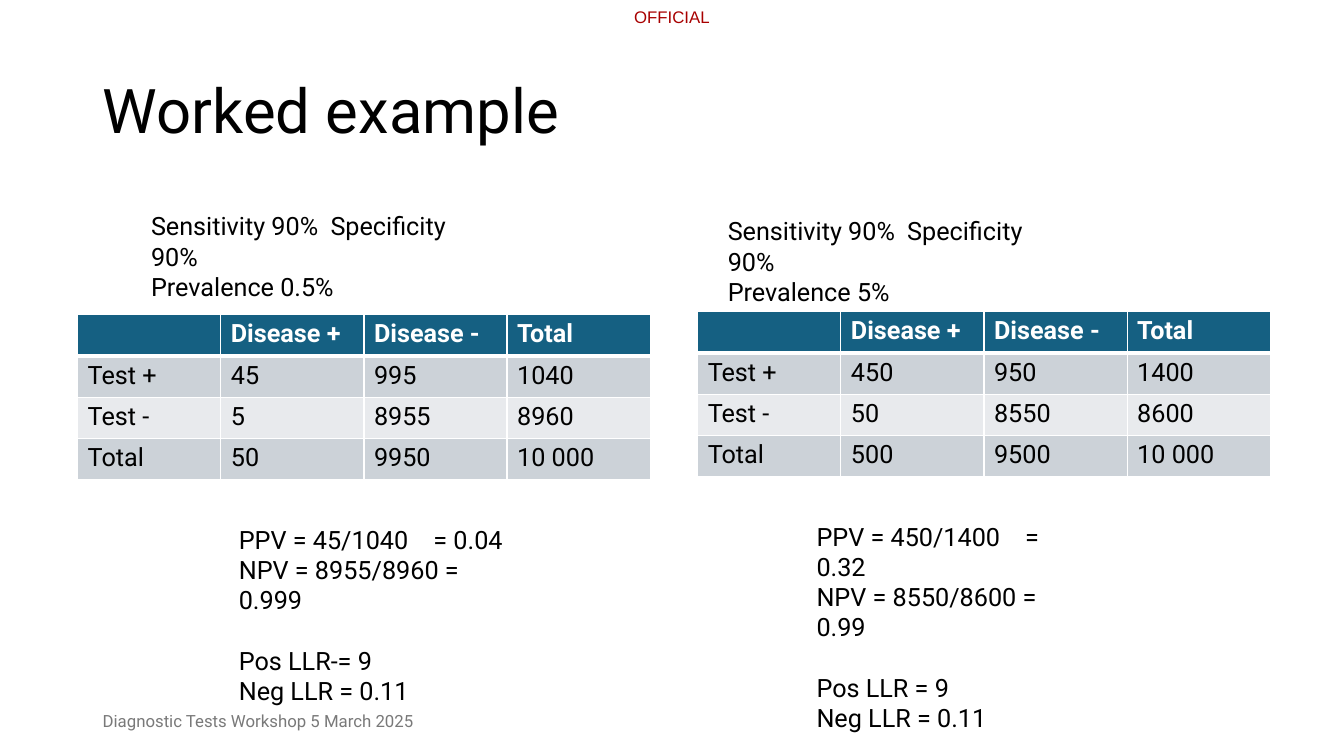
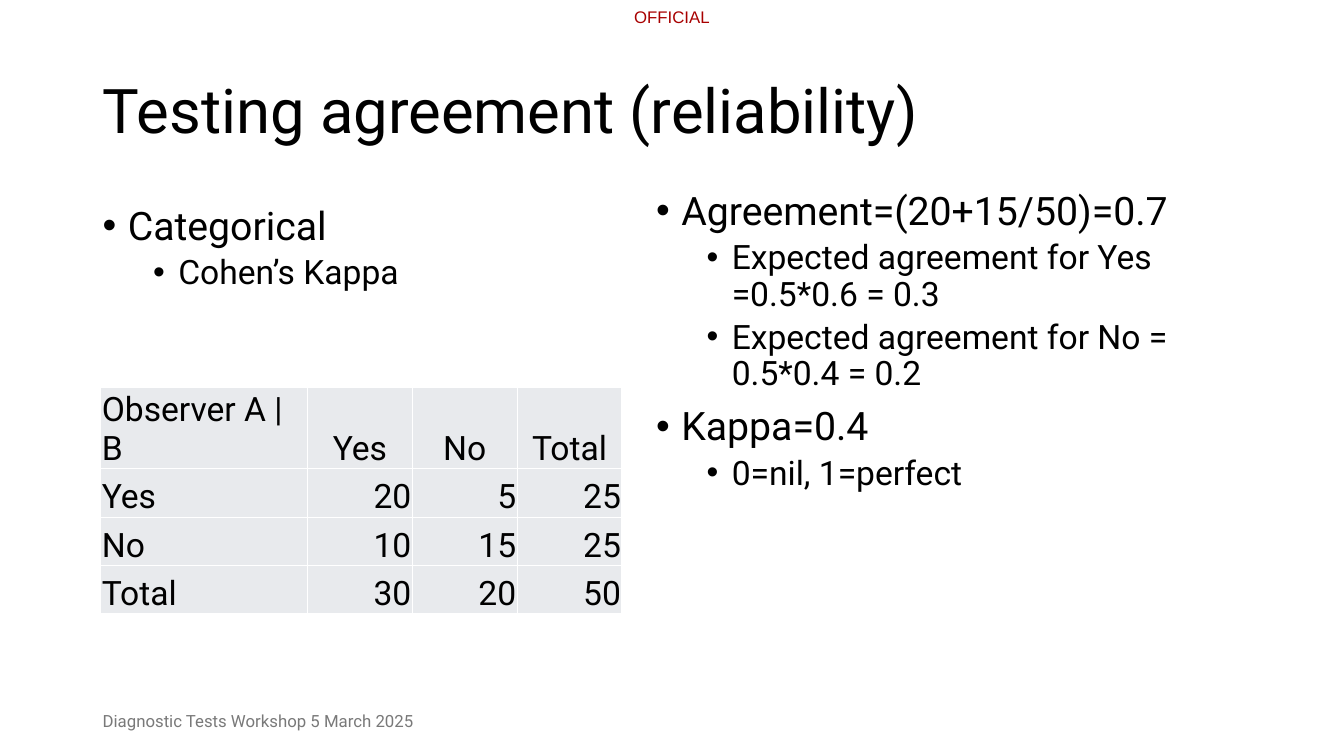
from lxml import etree
from pptx import Presentation
from pptx import util as u
from pptx.dml.color import RGBColor
from pptx.enum import text
from pptx.oxml.ns import qn

ALIGN = {"l": text.PP_ALIGN.LEFT, "c": text.PP_ALIGN.CENTER, "r": text.PP_ALIGN.RIGHT}


def color(hex_string):
    return RGBColor.from_string(hex_string)


def write(tf, content, size=18, font="Roboto", fill="000000", bold=False, align="l",
          before=0, spacing=None, level=None, tab=None):
    """Add one paragraph to a text frame; the first call fills the empty one."""
    p = tf.paragraphs[0]
    first = not p.runs
    if not first:
        p = tf.add_paragraph()
    p.alignment = ALIGN[align]
    p.space_before = u.Pt(0 if first else before)
    if spacing:
        p.line_spacing = spacing
    pPr = p._p.get_or_add_pPr()
    if level is not None:
        p.level = level
        pPr.set("marL", str(u.Inches(0.25 + 0.5 * level)))
        pPr.set("indent", str(u.Inches(-0.25)))
        etree.SubElement(pPr, qn("a:buFont"), typeface="Arial")
        etree.SubElement(pPr, qn("a:buChar"), char="•")
    if tab:
        tabs = etree.SubElement(pPr, qn("a:tabLst"))
        etree.SubElement(tabs, qn("a:tab"), pos=str(u.Inches(tab)), algn="l")
    r = p.add_run()
    r.text = content
    r.font.size = u.Pt(size)
    r.font.name = font
    r.font.bold = bold
    r.font.color.rgb = color(fill)


def border(cell, bottom):
    """Draw white cell edges, with the given bottom width in points."""
    tcPr = cell._tc.get_or_add_tcPr()
    for side, width in (("L", 1), ("R", 1), ("T", 1), ("B", bottom)):
        ln = etree.SubElement(tcPr, qn(f"a:ln{side}"), w=str(u.Pt(width)))
        solid = etree.SubElement(ln, qn("a:solidFill"))
        etree.SubElement(solid, qn("a:srgbClr"), val="FFFFFF")


class Deck:
    HEADER, DARK_BAND, LIGHT_BAND = "156082", "CCD2D8", "E8EAED"

    def __init__(self):
        self.prs = Presentation()
        self.prs.slide_width = u.Inches(13.33)
        self.prs.slide_height = u.Inches(7.5)
        self.s = None

    def slide(self, title):
        self.s = self.prs.slides.add_slide(self.prs.slide_layouts[5])
        sp = self.s.shapes.title
        sp.left, sp.top, sp.width, sp.height = map(u.Inches, (0.92, 0.4, 11.5, 1.45))
        tf = sp.text_frame
        tf.auto_size = text.MSO_AUTO_SIZE.NONE
        tf.word_wrap = True
        tf.vertical_anchor = text.MSO_ANCHOR.MIDDLE
        write(tf, title, size=44, spacing=0.9)
        tf = self.box(6.29, 0.07, 0.8, 0.2, margin=0)
        write(tf, "OFFICIAL", size=12, font="Arial", fill="A80000")
        tf = self.box(0.92, 6.95, 4.5, 0.4)
        tf.vertical_anchor = text.MSO_ANCHOR.MIDDLE
        write(tf, "Diagnostic Tests Workshop 5 March 2025", size=12, fill="797979")

    def box(self, left, top, width, height, margin=None):
        sp = self.s.shapes.add_textbox(*map(u.Inches, (left, top, width, height)))
        tf = sp.text_frame
        tf.word_wrap = True
        if margin is not None:
            tf.margin_left = tf.margin_right = u.Inches(margin)
            tf.margin_top = tf.margin_bottom = u.Inches(margin)
        return tf

    def bullets(self, left, top, width, height, items):
        tf = self.box(left, top, width, height)
        for level, content in items:
            write(tf, content, size=28 - 4 * level, before=10 - 5 * level,
                  spacing=0.9, level=level)

    def grid(self, left, top, widths, row_height, rows):
        """Add an unstyled table and yield (row, column, cell, content)."""
        shape = self.s.shapes.add_table(
            len(rows), len(widths), *map(u.Inches, (left, top, sum(widths), row_height * len(rows))))
        table = shape.table
        table.first_row = table.horz_banding = False
        for column, width in zip(table.columns, widths):
            column.width = u.Inches(width)
        for i, row in enumerate(rows):
            table.rows[i].height = u.Inches(row_height)
            for j, content in enumerate(row):
                yield i, j, table.cell(i, j), content

    def disease_table(self, left, top, rows):
        rows = [["", "Disease +", "Disease -", "Total"], *rows]
        for i, j, cell, content in self.grid(left, top, [1.42] * 4, 0.41, rows):
            head = i == 0
            border(cell, 3 if head else 1)
            cell.fill.solid()
            band = self.DARK_BAND if i % 2 else self.LIGHT_BAND
            cell.fill.fore_color.rgb = color(self.HEADER if head else band)
            if content:
                write(cell.text_frame, content, bold=head, fill="FFFFFF" if head else "000000")

    def observer_table(self, left, top, rows):
        for i, j, cell, content in self.grid(left, top, [2.05] + [1.04] * 3, 0.48, rows):
            border(cell, 1)
            cell.fill.solid()
            cell.fill.fore_color.rgb = color(self.LIGHT_BAND)
            cell.vertical_anchor = text.MSO_ANCHOR.BOTTOM
            cell.margin_left = cell.margin_right = cell.margin_top = u.Inches(0.01)
            cell.margin_bottom = 0
            align = "l" if j == 0 else "c" if i == 0 else "r"
            write(cell.text_frame, content, size=24, align=align)

    def assumptions(self, left, top, prevalence):
        tf = self.box(left, top, 3.5, 0.71)
        write(tf, "Sensitivity 90%\tSpecificity 90%", tab=1.78)
        write(tf, f"Prevalence {prevalence}")

    def results(self, left, top, width, tab, ppv, npv, positive):
        tf = self.box(left, top, width, 1.62)
        write(tf, ppv, tab=tab)
        write(tf, npv)
        write(tf, positive, before=21.5)
        write(tf, "Neg LLR = 0.11")


def worked_example(deck):
    deck.slide("Worked example")
    deck.assumptions(1.4, 2.04, "0.5%")
    deck.disease_table(0.77, 3.12, [
        ["Test +", "45", "995", "1040"],
        ["Test -", "5", "8955", "8960"],
        ["Total", "50", "9950", "10 000"]])
    deck.results(2.27, 5.15, 2.92, 1.93, "PPV = 45/1040\t= 0.04",
                 "NPV = 8955/8960 = 0.999", "Pos LLR-= 9")
    deck.assumptions(7.12, 2.09, "5%")
    deck.disease_table(6.92, 3.09, [
        ["Test +", "450", "950", "1400"],
        ["Test -", "50", "8550", "8600"],
        ["Total", "500", "9500", "10 000"]])
    deck.results(8, 5.12, 2.79, 2.07, "PPV = 450/1400\t= 0.32",
                 "NPV = 8550/8600 = 0.99", "Pos LLR = 9")


def testing_agreement(deck):
    deck.slide("Testing agreement (reliability)")
    deck.bullets(0.92, 2, 5.67, 4.76, [(0, "Categorical"), (1, "Cohen’s Kappa")])
    deck.bullets(6.41, 1.85, 6.2, 4.63, [
        (0, "Agreement=(20+15/50)=0.7"),
        (1, "Expected agreement for Yes =0.5*0.6 = 0.3"),
        (1, "Expected agreement for No = 0.5*0.4 = 0.2"),
        (0, "Kappa=0.4"),
        (1, "0=nil, 1=perfect")])
    deck.observer_table(1, 3.84, [
        ["Observer A | B", "Yes", "No", "Total"],
        ["Yes", "20", "5", "25"],
        ["No", "10", "15", "25"],
        ["Total", "30", "20", "50"]])


def main():
    deck = Deck()
    worked_example(deck)
    testing_agreement(deck)
    deck.prs.save("out.pptx")


if __name__ == "__main__":
    main()
